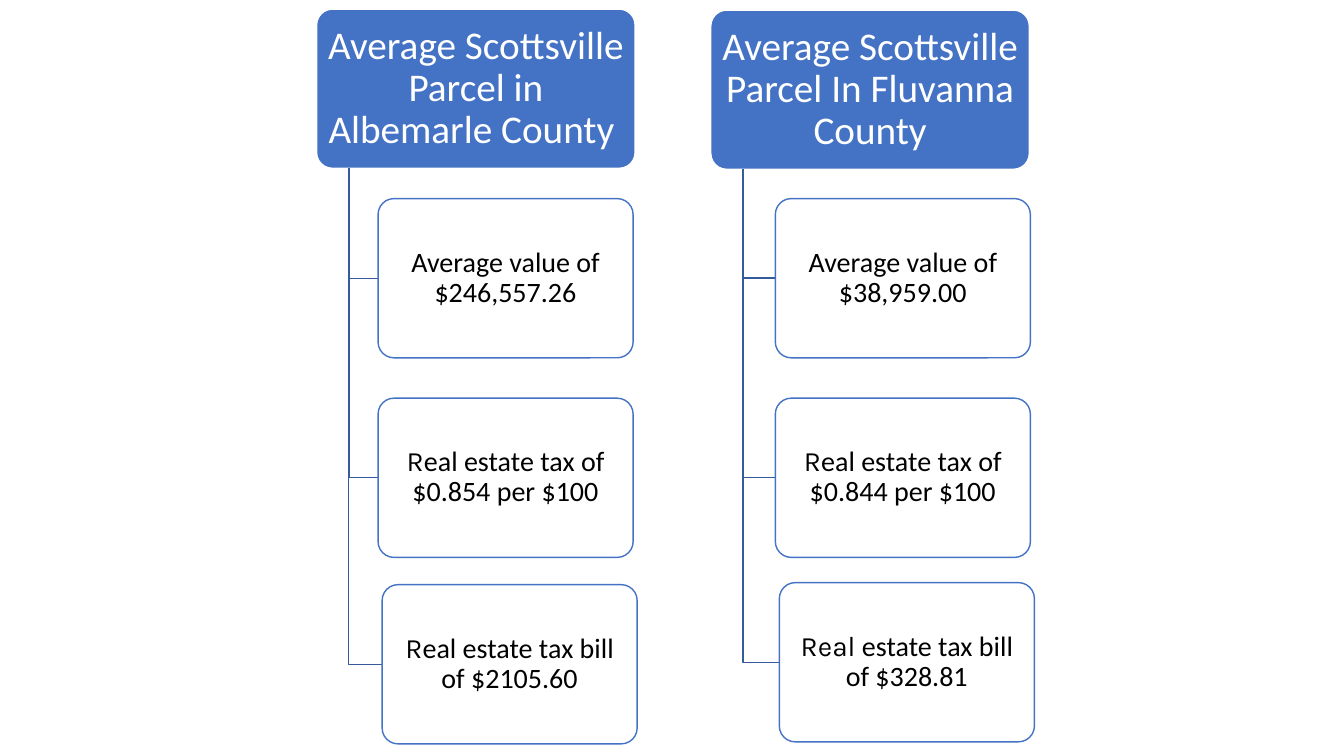
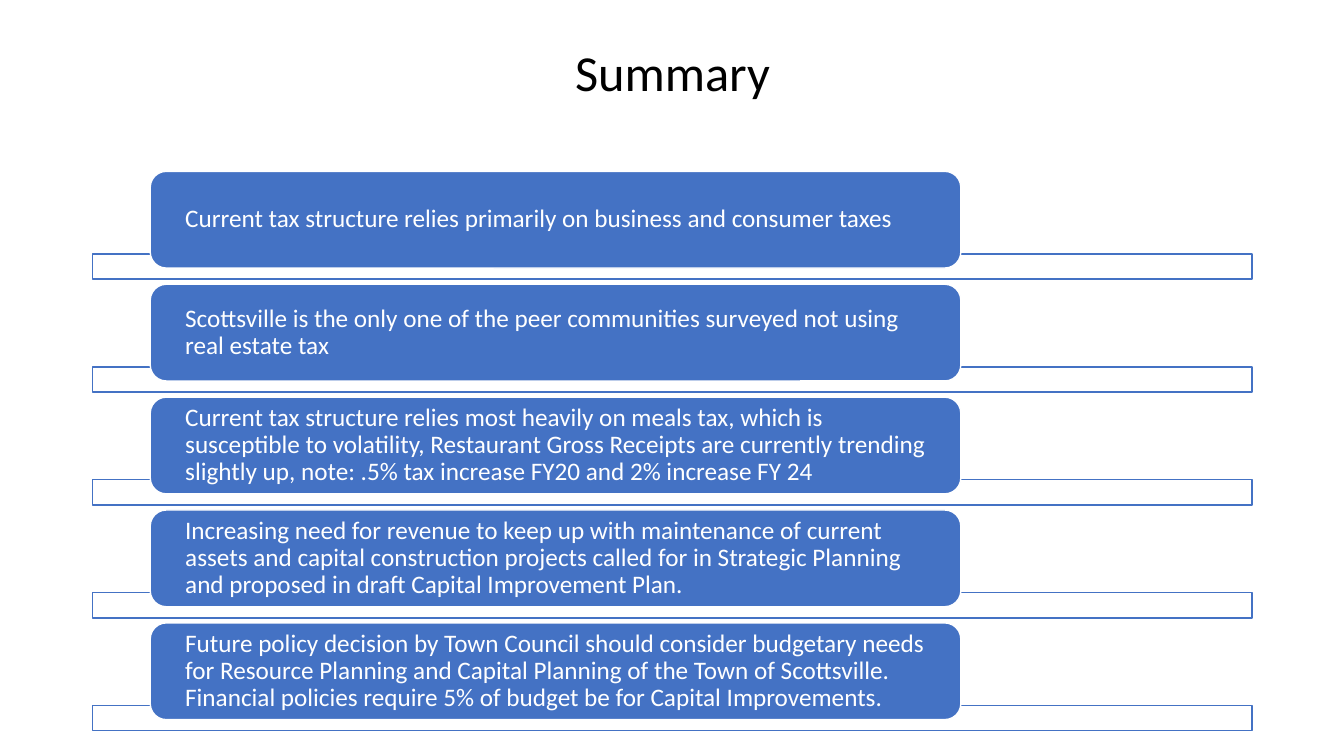
from dataclasses import dataclass
from pptx import Presentation
from pptx.dml.color import RGBColor
from pptx.enum.shapes import MSO_SHAPE
from pptx.enum.text import MSO_ANCHOR, PP_ALIGN
from pptx.util import Inches, Pt

TREES = [
    {
        "left": 3.14, "top": 0.09, "indent": 0.61,
        "head": "Average Scottsville Parcel in Albemarle County ",
        "leaves": [
            ("", "Average value of $246,557.26", 0, 1.97),
            ("R", "eal estate tax of $0.854 per $100", 0, 3.95),
            ("R", "eal estate tax bill of $2105.60", 0.04, 5.8),
        ],
    },
    {
        "left": 7.05, "top": 0.1, "indent": 0.64,
        "head": "Average Scottsville Parcel In Fluvanna County",
        "leaves": [
            ("", "Average value of $38,959.00", 0, 1.97),
            ("R", "eal estate tax of $0.844 per $100", 0, 3.95),
            ("Real", " estate tax bill of $328.81", 0.04, 5.78),
        ],
    },
]
TITLE = "Summary"
POINTS = [
    "Current tax structure relies primarily on business and consumer taxes",
    "Scottsville is the only one of the peer communities surveyed not using real estate tax",
    "Current tax structure relies most heavily on meals tax, which is susceptible to volatility, "
    "Restaurant Gross Receipts are currently trending slightly up, note: .5% tax increase FY20 "
    "and 2% increase FY 24",
    "Increasing need for revenue to keep up with maintenance of current assets and capital "
    "construction projects called for in Strategic Planning and proposed in draft Capital "
    "Improvement Plan.",
    "Future policy decision by Town Council should consider budgetary needs for Resource Planning "
    "and Capital Planning of the Town of Scottsville. Financial policies require 5% of budget be "
    "for Capital Improvements.",
]


@dataclass(frozen=True)
class Theme:
    blue: RGBColor = RGBColor(0x44, 0x72, 0xC4)
    navy: RGBColor = RGBColor(0x36, 0x5B, 0x9D)
    white: RGBColor = RGBColor(0xFF, 0xFF, 0xFF)
    black: RGBColor = RGBColor(0, 0, 0)
    font: str = "Calibri"
    accent: str = "Karla"
    title: int = 36
    head: int = 28
    leaf: int = 20
    point: int = 18


THEME = Theme()
HEAD_W, LEAF_W, BOX_H = 3.16, 2.53, 1.58
STEM = 0.32
BAR_X, BAR_W, BAR_H = 0.92, 11.5, 0.25
CARD_X, CARD_W, CARD_H = 1.49, 8.04, 0.96
CARD_Y, PITCH, DROP = 1.7, 1.12, 0.82


def box(slide, kind, rect, fill, line):
    shape = slide.shapes.add_shape(kind, *map(Inches, rect))
    shape.shadow.inherit = False
    shape.fill.solid()
    shape.fill.fore_color.rgb = fill
    shape.line.color.rgb = line
    shape.line.width = Pt(1)
    return shape


def write(shape, parts, size, color, align, pad=None):
    frame = shape.text_frame
    frame.word_wrap = True
    frame.vertical_anchor = MSO_ANCHOR.MIDDLE
    if pad:
        frame.margin_left = frame.margin_right = Inches(pad[0])
        frame.margin_top = frame.margin_bottom = Inches(pad[1])
    para = frame.paragraphs[0]
    para.alignment = align
    para.line_spacing = 0.9
    for text, font in parts:
        if text:
            run = para.add_run()
            run.text = text
            run.font.name = font
            run.font.size = Pt(size)
            run.font.color.rgb = color


def elbow(slide, x, y, end_x, end_y):
    path = slide.shapes.build_freeform(Inches(x), Inches(y))
    path.add_line_segments(
        [(Inches(x), Inches(end_y)), (Inches(end_x), Inches(end_y))], close=False
    )
    shape = path.convert_to_shape()
    shape.shadow.inherit = False
    shape.fill.background()
    shape.line.color.rgb = THEME.navy
    shape.line.width = Pt(1)


def tree(slide, data):
    left, top = data["left"], data["top"]
    head = box(slide, MSO_SHAPE.ROUNDED_RECTANGLE, (left, top, HEAD_W, BOX_H),
               THEME.blue, THEME.white)
    head.adjustments[0] = 0.1
    write(head, [(data["head"], THEME.font)], THEME.head, THEME.white,
          PP_ALIGN.CENTER, (0.06, 0.04))
    for lead, rest, shift, y in data["leaves"]:
        x = left + data["indent"] + shift
        elbow(slide, left + STEM, top + BOX_H, x, y + BOX_H / 2)
        leaf = box(slide, MSO_SHAPE.ROUNDED_RECTANGLE, (x, y, LEAF_W, BOX_H),
                   THEME.white, THEME.blue)
        leaf.adjustments[0] = 0.1
        write(leaf, [(lead, THEME.accent), (rest, THEME.font)], THEME.leaf,
              THEME.black, PP_ALIGN.CENTER, (0.04, 0.03))


def summary(slide):
    title = slide.shapes.title
    title.left, title.top, title.width, title.height = map(Inches, (BAR_X, 0.02, BAR_W, 1.45))
    write(title, [(TITLE, THEME.font)], THEME.title, THEME.black, PP_ALIGN.CENTER)
    for i, text in enumerate(POINTS):
        y = CARD_Y + i * PITCH
        box(slide, MSO_SHAPE.RECTANGLE, (BAR_X, y + DROP, BAR_W, BAR_H),
            THEME.white, THEME.blue)
        card = box(slide, MSO_SHAPE.ROUNDED_RECTANGLE, (CARD_X, y, CARD_W, CARD_H),
                   THEME.blue, THEME.white)
        write(card, [(text, THEME.font)], THEME.point, THEME.white, PP_ALIGN.LEFT, (0.3, 0))


def main():
    deck = Presentation()
    deck.slide_width, deck.slide_height = Inches(13.33), Inches(7.5)
    taxes = deck.slides.add_slide(deck.slide_layouts[6])
    for data in TREES:
        tree(taxes, data)
    summary(deck.slides.add_slide(deck.slide_layouts[5]))
    deck.save("out.pptx")


if __name__ == "__main__":
    main()
